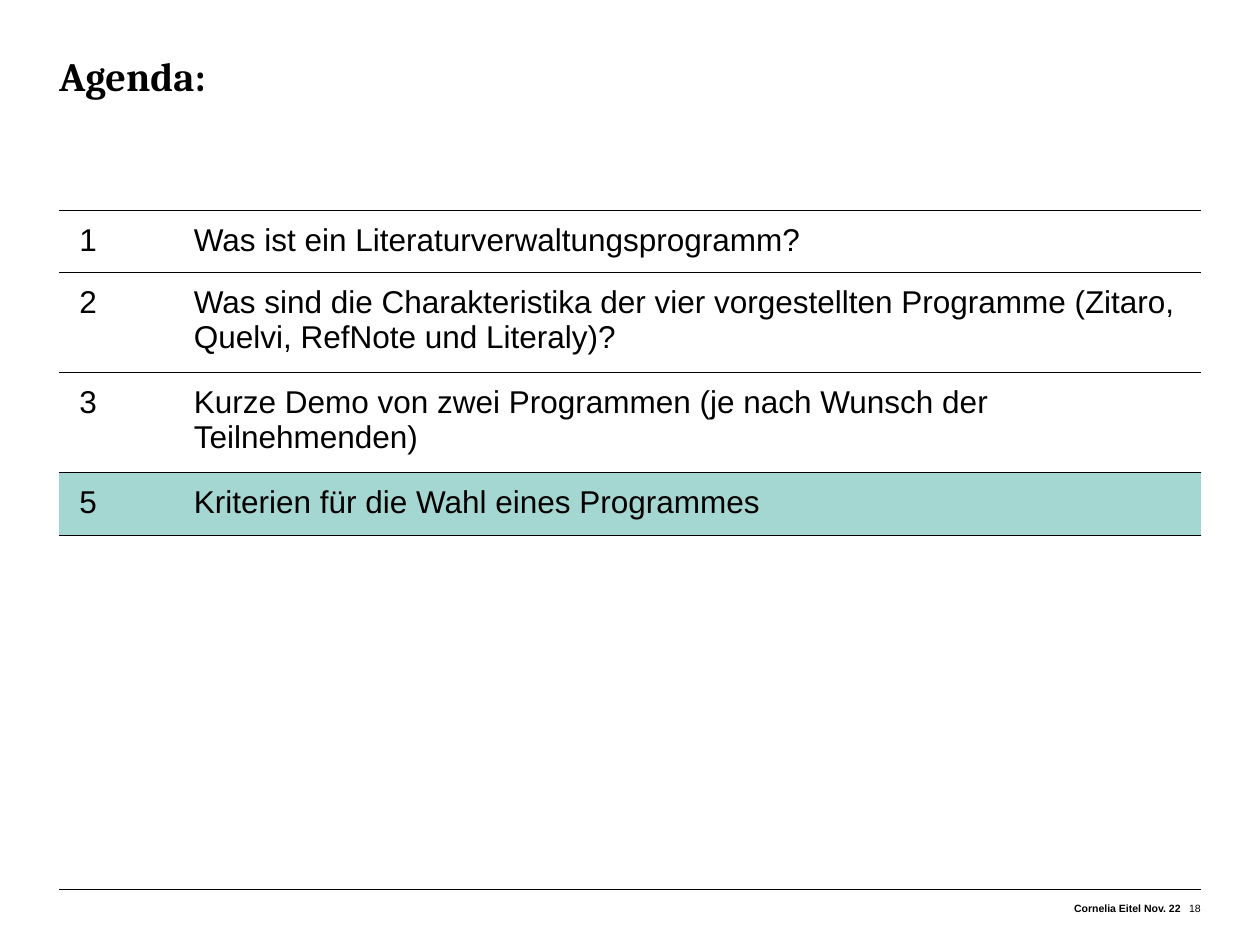
import dataclasses

import pptx
import pptx.dml.color
import pptx.enum.shapes
import pptx.enum.text
import pptx.oxml.ns
import pptx.util
from lxml import etree

Pt = pptx.util.Pt
ALIGN = pptx.enum.text.PP_ALIGN


@dataclasses.dataclass(frozen=True)
class Theme:
    ink: str = "000000"
    paper: str = "FFFFFF"
    highlight: str = "A5D7D2"
    heading_font: str = "Cambria"
    body_font: str = "Arial"
    heading_size: float = 23
    body_size: float = 18
    footer_size: float = 6


THEME = Theme()
LEFT, WIDTH = 33.84, 652.32
RIGHT = LEFT + WIDTH
NUMBER_WIDTH = 65.5
FOOTER_TOP, FOOTER_HEIGHT = 514.1, 14.4
PAGE_NUMBER_WIDTH = 11.5

# Number, topic, row height, highlighted
AGENDA = [
    ("1", "Was ist ein Literaturverwaltungsprogramm?", 34.3, False),
    ("2", "Was sind die Charakteristika der vier vorgestellten Programme "
          "(Zitaro, Quelvi, RefNote und Literaly)?", 54.6, False),
    ("3", "Kurze Demo von zwei Programmen (je nach Wunsch der Teilnehmenden)",
     54.6, False),
    ("5", "Kriterien für die Wahl eines Programmes", 34.3, True),
]


def rgb(value):
    return pptx.dml.color.RGBColor.from_string(value)


def write(frame, text, *, size=THEME.body_size, font=THEME.body_font,
          bold=False, align=ALIGN.LEFT, spacing=None):
    frame.word_wrap = True
    paragraph = frame.paragraphs[0]
    paragraph.alignment = align
    if spacing:
        paragraph.line_spacing = Pt(spacing)
    run = paragraph.add_run()
    run.text = text
    run.font.size = Pt(size)
    run.font.name = font
    run.font.bold = bold
    run.font.color.rgb = rgb(THEME.ink)


def add_text(slide, text, left, top, width, height, *, inset_top=0, **style):
    box = slide.shapes.add_textbox(Pt(left), Pt(top), Pt(width), Pt(height))
    frame = box.text_frame
    frame.margin_left = frame.margin_right = frame.margin_bottom = 0
    frame.margin_top = Pt(inset_top)
    write(frame, text, **style)


def add_rule(slide, top):
    rule = slide.shapes.add_connector(
        pptx.enum.shapes.MSO_CONNECTOR.STRAIGHT,
        Pt(LEFT), Pt(top), Pt(RIGHT), Pt(top))
    rule.line.color.rgb = rgb(THEME.ink)
    rule.line.width = Pt(0.25)
    etree.SubElement(rule._element.spPr, pptx.oxml.ns.qn("a:effectLst"))


def set_borders(cell):
    """Draw thin lines above and below the cell, none at its sides."""
    qn = pptx.oxml.ns.qn
    properties = cell._tc.get_or_add_tcPr()
    for position, side in enumerate(("lnL", "lnR", "lnT", "lnB")):
        border = etree.Element(qn("a:" + side), w=str(Pt(0.5)))
        if side in ("lnT", "lnB"):
            fill = etree.SubElement(border, qn("a:solidFill"))
            etree.SubElement(fill, qn("a:srgbClr"), val=THEME.ink)
        else:
            etree.SubElement(border, qn("a:noFill"))
        properties.insert(position, border)


def add_agenda(slide, top):
    height = sum(row[2] for row in AGENDA)
    agenda = slide.shapes.add_table(
        len(AGENDA), 2, Pt(LEFT), Pt(top), Pt(WIDTH), Pt(height)).table
    agenda.first_row = agenda.horz_banding = False
    agenda.columns[0].width = Pt(NUMBER_WIDTH)
    agenda.columns[1].width = Pt(WIDTH - NUMBER_WIDTH)
    for index, (number, topic, row_height, active) in enumerate(AGENDA):
        agenda.rows[index].height = Pt(row_height)
        for column, text in enumerate((number, topic)):
            cell = agenda.cell(index, column)
            cell.margin_left = cell.margin_right = Pt(11.5)
            cell.margin_top = cell.margin_bottom = Pt(7)
            cell.fill.solid()
            cell.fill.fore_color.rgb = rgb(
                THEME.highlight if active else THEME.paper)
            set_borders(cell)
            write(cell.text_frame, text)


def add_footer(slide):
    number_left = RIGHT - PAGE_NUMBER_WIDTH
    style = dict(size=THEME.footer_size, align=ALIGN.RIGHT, inset_top=1.4)
    add_text(slide, "Cornelia Eitel Nov. 22", number_left - 150.5, FOOTER_TOP,
             150.5, FOOTER_HEIGHT, bold=True, **style)
    add_text(slide, "18", number_left, FOOTER_TOP,
             PAGE_NUMBER_WIDTH, FOOTER_HEIGHT, **style)


def main():
    deck = pptx.Presentation()
    deck.slide_width, deck.slide_height = Pt(720), Pt(540)
    slide = deck.slides.add_slide(deck.slide_layouts[6])

    # Heading
    add_text(slide, "Agenda:", LEFT, 31.7, WIDTH, 59.8, bold=True, spacing=25,
             size=THEME.heading_size, font=THEME.heading_font)

    # Agenda table
    add_agenda(slide, 120.2)

    # Footer
    add_rule(slide, 508.3)
    add_footer(slide)

    deck.save("out.pptx")


if __name__ == "__main__":
    main()
